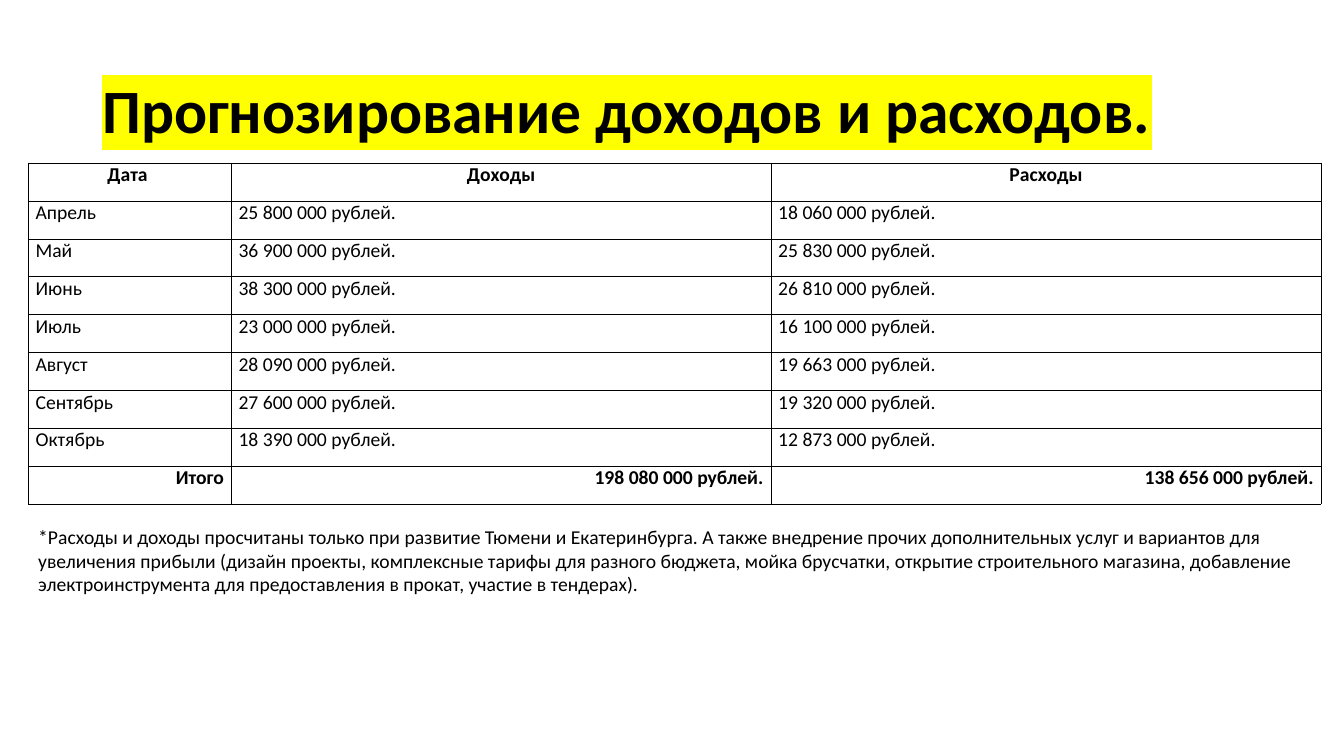
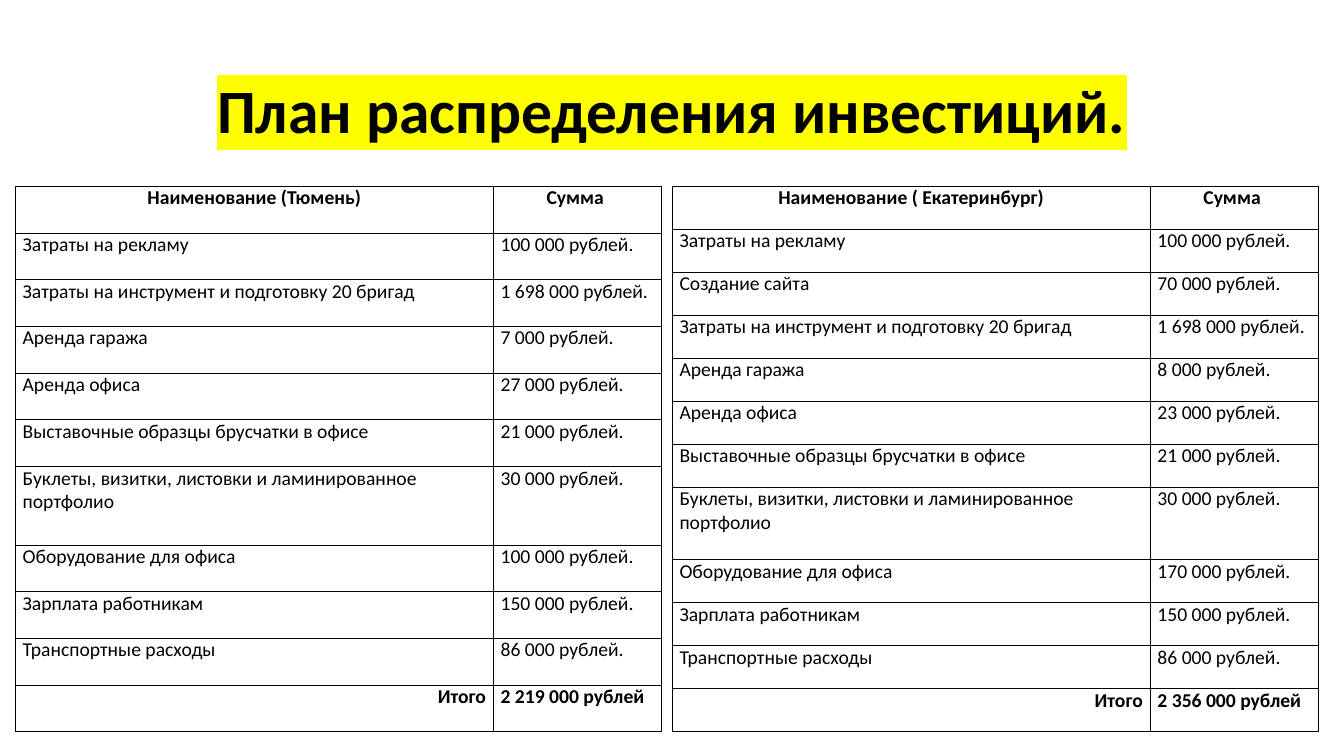
from lxml import etree
from pptx import Presentation
from pptx.dml.color import RGBColor
from pptx.enum import text
from pptx.oxml import ns
from pptx.util import Pt

FONT = "Calibri"
BLACK, YELLOW = "000000", "FFFF00"
TITLE_SIZE, BODY_SIZE = 44, 14
LEFT, CENTER, RIGHT = text.PP_ALIGN.LEFT, text.PP_ALIGN.CENTER, text.PP_ALIGN.RIGHT

FORECAST_TITLE = "Прогнозирование доходов и расходов."
FORECAST = [
    ("Дата ", "Доходы", "Расходы"),
    ("Апрель", "25 800 000 рублей.", "18 060 000 рублей."),
    ("Май", "36 900 000 рублей.", "25 830 000 рублей."),
    ("Июнь", "38 300 000 рублей.", "26 810 000 рублей."),
    ("Июль", "23 000 000 рублей.", "16 100 000 рублей."),
    ("Август", "28 090 000 рублей.", "19 663 000 рублей."),
    ("Сентябрь", "27 600 000 рублей.", "19 320 000 рублей."),
    ("Октябрь", "18 390 000 рублей.", "12 873 000 рублей."),
    ("Итого", "198 080 000 рублей.", "138 656 000 рублей."),
]
FORECAST_NOTE = (
    "*Расходы и доходы просчитаны только при развитие Тюмени и Екатеринбурга. "
    "А также внедрение прочих дополнительных услуг и вариантов для увеличения прибыли "
    "(дизайн проекты, комплексные тарифы для разного бюджета, мойка брусчатки, "
    "открытие строительного магазина, добавление электроинструмента для предоставления "
    "в прокат, участие в тендерах)."
)

PLAN_TITLE = "План распределения инвестиций."
PLAN_HEADS = ["Наименование (Тюмень)", "Наименование ( Екатеринбург)"]
BOOKLETS = "Буклеты, визитки, листовки и ламинированное портфолио"
PLAN = [
    ("Затраты на рекламу", "100 000 рублей.", "100 000 рублей."),
    ("Создание сайта", None, "70 000 рублей."),
    ("Затраты на инструмент и подготовку 20 бригад", "1 698 000 рублей.", "1 698 000 рублей."),
    ("Аренда гаража", "7 000 рублей.", "8 000 рублей."),
    ("Аренда офиса", "27 000 рублей.", "23 000 рублей."),
    ("Выставочные образцы брусчатки в офисе", "21 000 рублей.", "21 000 рублей."),
    (BOOKLETS, "30 000 рублей.", "30 000 рублей."),
    ("Оборудование для офиса", "100 000 рублей.", "170 000 рублей."),
    ("Зарплата работникам", "150 000 рублей.", "150 000 рублей."),
    ("Транспортные расходы", "86 000 рублей.", "86 000 рублей."),
    ("Итого", "2 219 000 рублей", "2 356 000 рублей"),
]
TALL_ROW = 1.68


def color(value):
    return RGBColor.from_string(value)


def write(frame, words, size, bold=False, align=LEFT):
    para = frame.paragraphs[0]
    para.alignment = align
    font = para.font
    font.name, font.size, font.bold = FONT, Pt(size), bold
    font.color.rgb = color(BLACK)
    span = para.add_run()
    span.text = words
    return para, span


def add_text(page, left, top, width, height):
    frame = page.shapes.add_textbox(Pt(left), Pt(top), Pt(width), Pt(height)).text_frame
    frame.word_wrap = True
    return frame


def add_page(deck, title, align):
    page = deck.slides.add_slide(deck.slide_layouts[6])
    frame = add_text(page, 66, 28.75, 828, 104.4)
    frame.vertical_anchor = text.MSO_ANCHOR.MIDDLE
    para, span = write(frame, title, TITLE_SIZE, True, align)
    para.line_spacing = 0.9
    highlight = etree.SubElement(span.font._element, ns.qn("a:highlight"))
    etree.SubElement(highlight, ns.qn("a:srgbClr"), val=YELLOW)
    return page


def style_cell(cell):
    cell.margin_left = cell.margin_right = Pt(5.2)
    cell.margin_top = cell.margin_bottom = Pt(0)
    props = cell._tc.get_or_add_tcPr()
    for side in ("lnL", "lnR", "lnT", "lnB"):
        line = etree.SubElement(props, ns.qn("a:" + side), w=str(Pt(0.5)))
        fill = etree.SubElement(line, ns.qn("a:solidFill"))
        etree.SubElement(fill, ns.qn("a:srgbClr"), val=BLACK)
    cell.fill.background()


def add_table(page, rows, left, top, widths, height, total_aligns):
    weights = [TALL_ROW if row[0] == BOOKLETS else 1 for row in rows]
    table = page.shapes.add_table(
        len(rows), len(widths), Pt(left), Pt(top), Pt(sum(widths)), Pt(height)
    ).table
    table.first_row = table.horz_banding = False
    for column, width in zip(table.columns, widths):
        column.width = Pt(width)
    last = len(rows) - 1
    for r, (row, weight) in enumerate(zip(rows, weights)):
        table.rows[r].height = Pt(height * weight / sum(weights))
        aligns = {0: [CENTER] * len(row), last: total_aligns}.get(r, [LEFT] * len(row))
        for c, (words, align) in enumerate(zip(row, aligns)):
            cell = table.cell(r, c)
            style_cell(cell)
            write(cell.text_frame, words, BODY_SIZE, r in (0, last), align)


def main():
    deck = Presentation()
    deck.slide_width, deck.slide_height = Pt(960), Pt(540)

    page = add_page(deck, FORECAST_TITLE, LEFT)
    add_table(page, FORECAST, 20.2, 116.6, [145, 385.5, 393], 243.4, [RIGHT] * 3)
    note = add_text(page, 20.2, 371.5, 923, 59)
    write(note, FORECAST_NOTE, BODY_SIZE)

    page = add_page(deck, PLAN_TITLE, CENTER)
    for city, head in enumerate(PLAN_HEADS):
        costs = [(row[0], row[city + 1]) for row in PLAN if row[city + 1]]
        rows = [(head, "Сумма ")] + costs
        add_table(page, rows, 11 + city * 469.2, 133, [341.4, 120.2], 389.7, [RIGHT, LEFT])

    deck.save("out.pptx")


if __name__ == "__main__":
    main()
